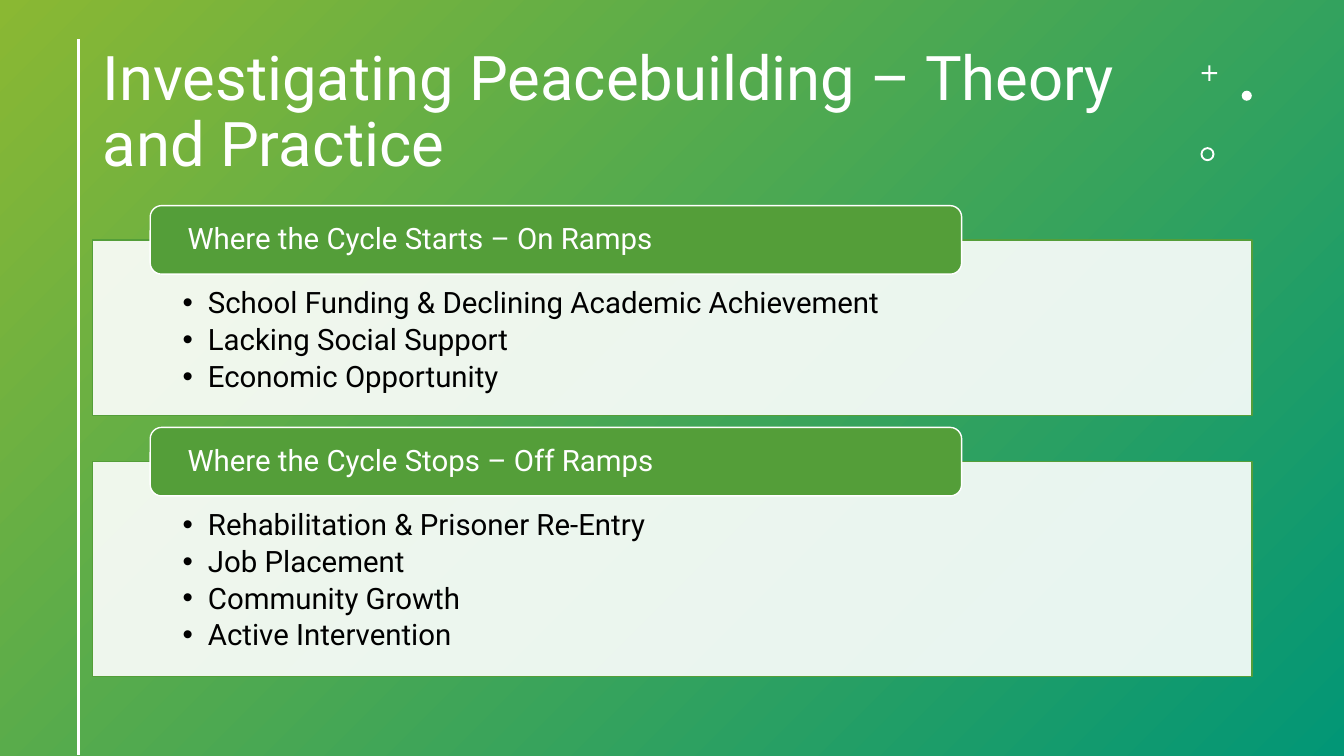
from lxml.etree import SubElement
from pptx import Presentation
from pptx.dml.color import RGBColor
from pptx.enum.shapes import MSO_CONNECTOR, MSO_SHAPE
from pptx.enum.text import MSO_ANCHOR, PP_ALIGN
from pptx.oxml.ns import qn
from pptx.util import Pt

LIME = RGBColor(0x8A, 0xB8, 0x33)
TEAL = RGBColor(0x02, 0x96, 0x76)
GREEN = RGBColor(0x54, 0x9E, 0x39)
WHITE = RGBColor(0xFF, 0xFF, 0xFF)
BLACK = RGBColor(0, 0, 0)

SLIDE_WIDTH, SLIDE_HEIGHT = 960, 540
PANEL_LEFT, PANEL_WIDTH = 66.24, 828
HEADING_LEFT, HEADING_WIDTH, HEADING_HEIGHT = 107.3, 579.6, 48.96
HEADING_RISE = 24.5
PANEL_BASE, BULLET_STEP = 41, 28.1
SECTION_GAP = 8.6

SECTIONS = [
    ("Where the Cycle Starts – On Ramps",
     ["School Funding & Declining Academic Achievement",
      "Lacking Social Support",
      "Economic Opportunity"]),
    ("Where the Cycle Stops – Off Ramps",
     ["Rehabilitation & Prisoner Re-Entry",
      "Job Placement",
      "Community Growth",
      "Active Intervention"]),
]


def add_filled(slide, kind, box, fill, outline=None):
    shape = slide.shapes.add_shape(kind, *map(Pt, box))
    shape.shadow.inherit = False
    shape.fill.solid()
    shape.fill.fore_color.rgb = fill
    if outline is None:
        shape.line.fill.background()
    else:
        shape.line.color.rgb = outline
        shape.line.width = Pt(1)
    return shape


def set_frame(shape, anchor, margins):
    """Set anchor and margins, given as left, top, right, bottom."""
    frame = shape.text_frame
    frame.word_wrap = True
    frame.vertical_anchor = anchor
    for side, margin in zip(("left", "top", "right", "bottom"), margins):
        setattr(frame, f"margin_{side}", Pt(margin))
    return frame


def write(paragraph, text, size, color):
    paragraph.text = text
    paragraph.alignment = PP_ALIGN.LEFT
    paragraph.line_spacing = 0.9
    font = paragraph.runs[0].font
    font.name = "Roboto"
    font.size = Pt(size)
    font.color.rgb = color


def add_bullet(paragraph):
    properties = paragraph._p.get_or_add_pPr()
    properties.set("marL", str(Pt(18)))
    properties.set("indent", str(-Pt(18)))
    SubElement(properties, qn("a:buFont"), typeface="Arial")
    SubElement(properties, qn("a:buChar"), char="•")


def add_backdrop(slide):
    backdrop = add_filled(slide, MSO_SHAPE.RECTANGLE,
                          (0, 0, SLIDE_WIDTH, SLIDE_HEIGHT), LIME)
    backdrop.fill.gradient()
    backdrop.fill.gradient_angle = 315
    for stop, color in zip(backdrop.fill.gradient_stops, (LIME, TEAL)):
        stop.color.rgb = color


def add_title(slide, text):
    title = slide.shapes.add_textbox(Pt(66.24), Pt(28.8), Pt(771.8), Pt(104.4))
    frame = set_frame(title, MSO_ANCHOR.MIDDLE, (7.2, 3.6, 7.2, 3.6))
    write(frame.paragraphs[0], text, 44, WHITE)


def add_side_rule(slide):
    rule = slide.shapes.add_connector(
        MSO_CONNECTOR.STRAIGHT, Pt(56), Pt(28), Pt(56), Pt(539.5))
    rule.line.color.rgb = WHITE
    rule.line.width = Pt(2)
    SubElement(rule._element.spPr, qn("a:effectLst"))


def add_ornaments(slide):
    plus = add_filled(slide, MSO_SHAPE.CROSS, (858.4, 46.8, 11, 11), WHITE)
    plus.adjustments[0] = 0.44
    add_filled(slide, MSO_SHAPE.OVAL, (887, 64.8, 7.2, 7.2), WHITE)
    ring = add_filled(slide, MSO_SHAPE.DONUT, (857.5, 105.1, 10, 10), WHITE)
    ring.adjustments[0] = 0.14


def add_panel(slide, top, height, bullets):
    panel = add_filled(slide, MSO_SHAPE.RECTANGLE,
                       (PANEL_LEFT, top, PANEL_WIDTH, height), WHITE, GREEN)
    color = panel._element.spPr.find(qn("a:solidFill"))[0]
    SubElement(color, qn("a:alpha"), val="90000")
    frame = set_frame(panel, MSO_ANCHOR.TOP, (64.3, 34.6, 64.3, 11.5))
    for index, bullet in enumerate(bullets):
        paragraph = frame.add_paragraph() if index else frame.paragraphs[0]
        add_bullet(paragraph)
        write(paragraph, bullet, 21, BLACK)
        paragraph.space_after = Pt(3.6)


def add_heading(slide, top, text):
    heading = add_filled(
        slide, MSO_SHAPE.ROUNDED_RECTANGLE,
        (HEADING_LEFT, top, HEADING_WIDTH, HEADING_HEIGHT), GREEN, WHITE)
    frame = set_frame(heading, MSO_ANCHOR.MIDDLE, (24.3, 0, 24.3, 0))
    write(frame.paragraphs[0], text, 21, WHITE)


def add_sections(slide, top):
    for heading, bullets in SECTIONS:
        panel_top = top + HEADING_RISE
        panel_height = PANEL_BASE + BULLET_STEP * len(bullets)
        add_panel(slide, panel_top, panel_height, bullets)
        add_heading(slide, top, heading)
        top = panel_top + panel_height + SECTION_GAP


def main():
    presentation = Presentation()
    presentation.slide_width = Pt(SLIDE_WIDTH)
    presentation.slide_height = Pt(SLIDE_HEIGHT)
    slide = presentation.slides.add_slide(presentation.slide_layouts[6])
    add_backdrop(slide)
    add_title(slide, "Investigating Peacebuilding – Theory and Practice")
    add_side_rule(slide)
    add_ornaments(slide)
    add_sections(slide, 146.9)
    presentation.save("out.pptx")


if __name__ == "__main__":
    main()
